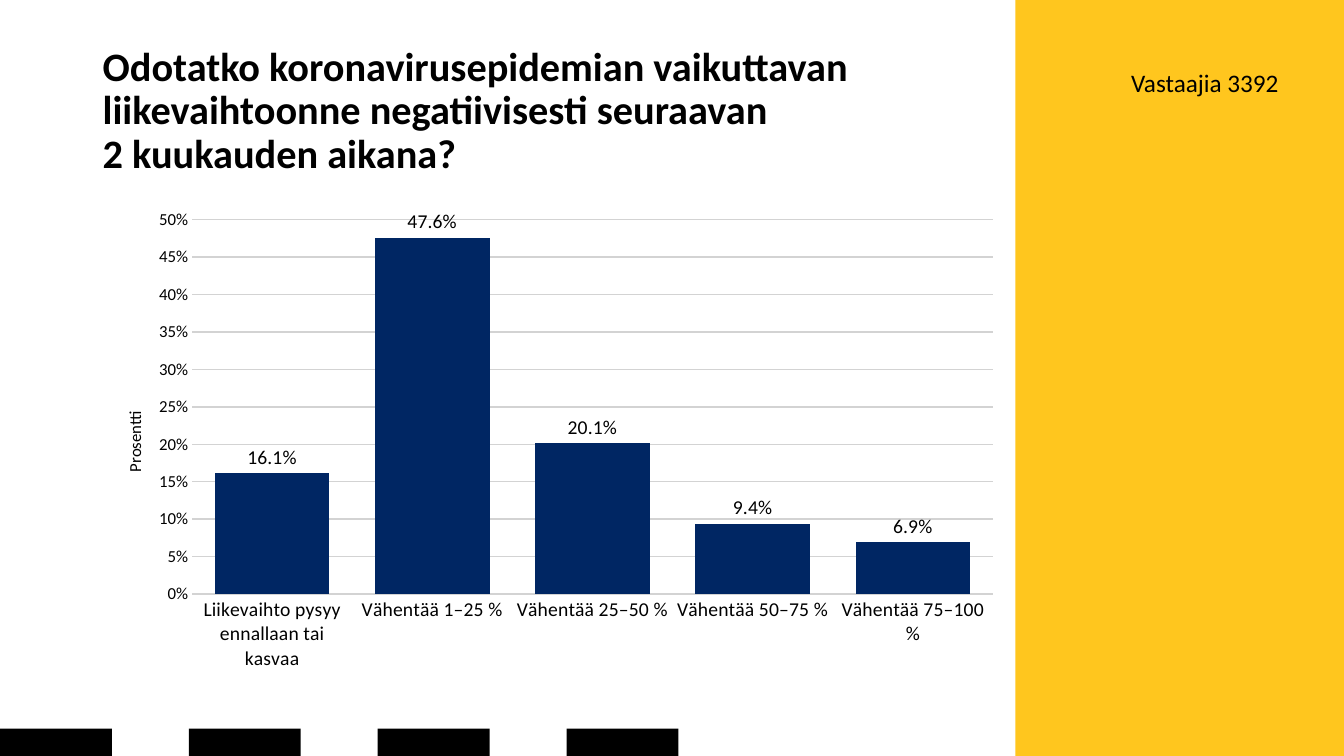
from lxml import etree
from pptx import Presentation
from pptx.chart.data import CategoryChartData
from pptx.dml.color import RGBColor
from pptx.enum.chart import XL_CHART_TYPE, XL_LABEL_POSITION, XL_TICK_MARK
from pptx.enum.shapes import MSO_SHAPE
from pptx.enum.text import MSO_ANCHOR, PP_ALIGN
from pptx.oxml.ns import qn
from pptx.util import Inches, Pt

COLUMNS = XL_CHART_TYPE.COLUMN_CLUSTERED
OUTSIDE_END = XL_LABEL_POSITION.OUTSIDE_END
TICK_INSIDE = XL_TICK_MARK.INSIDE
RECTANGLE = MSO_SHAPE.RECTANGLE
MIDDLE, TOP = MSO_ANCHOR.MIDDLE, MSO_ANCHOR.TOP
LEFT, RIGHT = PP_ALIGN.LEFT, PP_ALIGN.RIGHT

YELLOW, BLACK, NAVY, GREY = "FFC61E", "000000", "002663", "D3D3D3"

TITLE_LINES = [
    "Odotatko koronavirusepidemian vaikuttavan liikevaihtoonne negatiivisesti seuraavan",
    "2 kuukauden aikana?",
]
REVENUE_SHARES = {
    "Liikevaihto pysyy ennallaan tai kasvaa": 0.161,
    "Vähentää 1–25 %": 0.476,
    "Vähentää 25–50 %": 0.201,
    "Vähentää 50–75 %": 0.094,
    "Vähentää 75–100 %": 0.069,
}


def color(hex_string):
    return RGBColor.from_string(hex_string)


def place(parent, index, **settings):
    """Give a chart part a manual layout, as fractions of the chart."""
    for layout in parent.findall(qn("c:layout")):
        parent.remove(layout)
    layout = etree.Element(qn("c:layout"))
    manual = etree.SubElement(layout, qn("c:manualLayout"))
    for name, value in settings.items():
        etree.SubElement(manual, qn(f"c:{name}")).set("val", str(value))
    parent.insert(index, layout)


class SlideBuilder:
    font_name = "Calibri"

    def __init__(self, slide):
        self.slide = slide

    def style(self, font, size, bold=False):
        font.name = self.font_name
        font.size = Pt(size)
        font.bold = bold
        font.color.rgb = color(BLACK)

    def rectangle(self, left, top, width, height, fill):
        shape = self.slide.shapes.add_shape(
            RECTANGLE, Inches(left), Inches(top), Inches(width), Inches(height))
        shape.shadow.inherit = False
        shape.fill.solid()
        shape.fill.fore_color.rgb = color(fill)
        shape.line.fill.background()

    def text(self, left, top, width, height, lines, size, bold=False,
             align=LEFT, anchor=TOP, line_spacing=1.0):
        """Add one paragraph whose lines are parted by line breaks."""
        box = self.slide.shapes.add_textbox(
            Inches(left), Inches(top), Inches(width), Inches(height))
        frame = box.text_frame
        frame.word_wrap = True
        frame.vertical_anchor = anchor
        paragraph = frame.paragraphs[0]
        paragraph.alignment = align
        paragraph.line_spacing = line_spacing
        for number, line in enumerate(lines):
            if number:
                paragraph.add_line_break()
            run = paragraph.add_run()
            run.text = line
            self.style(run.font, size, bold)

    def column_chart(self, left, top, width, height, shares, axis_label):
        data = CategoryChartData(number_format="0.0%")
        data.categories = list(shares)
        data.add_series("Series 1", list(shares.values()))
        chart = self.slide.shapes.add_chart(
            COLUMNS, Inches(left), Inches(top), Inches(width), Inches(height), data).chart
        chart.has_legend = False
        chart.has_title = False
        self.style(chart.font, 11)

        plot = chart.plots[0]
        plot.gap_width = 40
        plot.vary_by_categories = False
        fill = plot.series[0].format.fill
        fill.solid()
        fill.fore_color.rgb = color(NAVY)
        plot.has_data_labels = True
        labels = plot.data_labels
        labels.show_value = True
        labels.position = OUTSIDE_END
        labels.number_format = "0.0%"
        labels.number_format_is_linked = False
        self.style(labels.font, 14)

        for axis, size in ((chart.category_axis, 14), (chart.value_axis, 12)):
            axis.major_tick_mark = TICK_INSIDE
            axis.format.line.fill.background()
            self.style(axis.tick_labels.font, size)

        value_axis = chart.value_axis
        value_axis.minimum_scale = 0
        value_axis.maximum_scale = 0.5
        value_axis.major_unit = 0.05
        value_axis.tick_labels.number_format = "0%"
        value_axis.tick_labels.number_format_is_linked = False
        gridline = value_axis.major_gridlines.format.line
        gridline.color.rgb = color(GREY)
        gridline.width = Pt(1)

        title = value_axis.axis_title
        run = title.text_frame.paragraphs[0].add_run()
        run.text = axis_label
        self.style(run.font, 12)
        title_element = title._element
        title_element.find(".//" + qn("a:bodyPr")).set("rot", "-5400000")
        place(title_element, 1, xMode="edge", yMode="edge", x=0.03, y=0.43)

        plot_area = chart._chartSpace.find(".//" + qn("c:plotArea"))
        place(plot_area, 0, layoutTarget="inner", xMode="edge", yMode="edge",
              x=0.108, y=0.038, w=0.871, h=0.78)


def main():
    presentation = Presentation()
    presentation.slide_width = Inches(13.33)
    presentation.slide_height = Inches(7.5)
    builder = SlideBuilder(presentation.slides.add_slide(presentation.slide_layouts[6]))

    builder.rectangle(10.07, 0, 3.26, 7.5, YELLOW)
    for number in range(4):
        builder.rectangle(number * 1.873, 7.23, 1.11, 0.27, BLACK)
    builder.text(0.92, 0.4, 10.16, 1.42, TITLE_LINES, 28.8, bold=True,
                 anchor=MIDDLE, line_spacing=0.9)
    builder.text(10.71, 0.62, 2.07, 0.4, ["Vastaajia 3392"], 18, align=RIGHT)
    builder.column_chart(0.92, 2, 9.12, 4.76, REVENUE_SHARES, "Prosentti")

    presentation.save("out.pptx")


if __name__ == "__main__":
    main()
